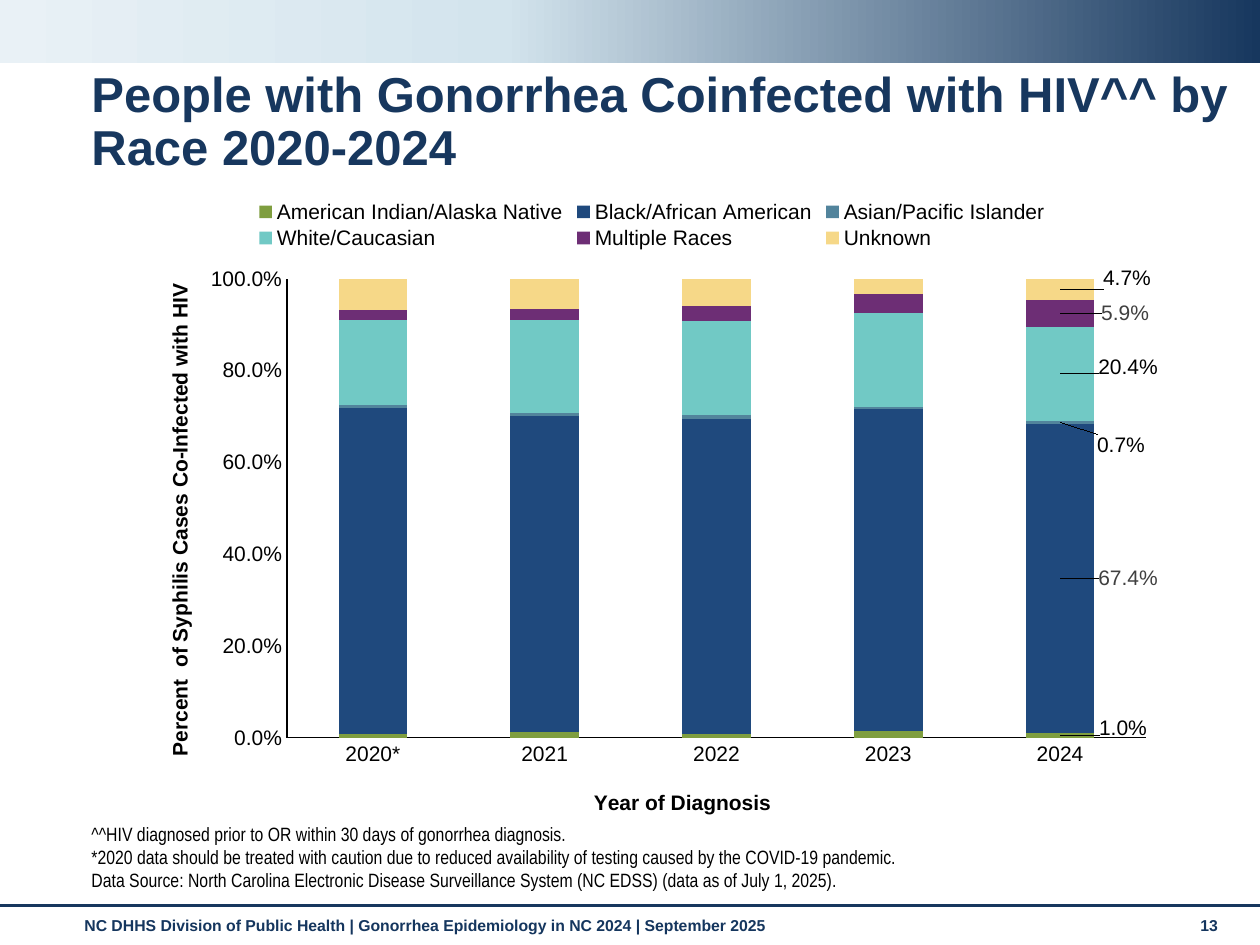
import copy
from dataclasses import dataclass

import pptx
import pptx.chart.data
import pptx.dml.color
import pptx.enum.chart
import pptx.enum.shapes
import pptx.enum.text
import pptx.oxml
import pptx.oxml.ns
import pptx.util

RGB = pptx.dml.color.RGBColor
NAVY = RGB(0x17, 0x37, 0x5E)
INK = RGB(0x15, 0x36, 0x5E)
BLACK = RGB(0, 0, 0)
GRAY = RGB(0x40, 0x40, 0x40)
MIST = RGB(0xE9, 0xF1, 0xF6)
SKY = RGB(0xD3, 0xE4, 0xED)
GREEN = RGB(0x7F, 0x9E, 0x3F)
BLUE = RGB(0x1F, 0x49, 0x7D)
STEEL = RGB(0x52, 0x84, 0x9C)
TEAL = RGB(0x71, 0xC9, 0xC5)
PLUM = RGB(0x6D, 0x2E, 0x75)
GOLD = RGB(0xF6, 0xD8, 0x88)

SCALE = 914400 / 126
TOP = pptx.enum.text.MSO_ANCHOR.TOP
BASE = pptx.enum.text.MSO_ANCHOR.BOTTOM
qn = pptx.oxml.ns.qn


@dataclass
class Box:
    left: int
    top: int
    width: int
    height: int

    def emu(self) -> list[int]:
        return [px(n) for n in (self.left, self.top, self.width, self.height)]


@dataclass
class Note:
    box: Box
    lines: list[str]
    size: int
    color: RGB
    face: str = "Arial"
    bold: bool = True
    anchor: pptx.enum.text.MSO_ANCHOR = TOP
    space: float = 1.0


@dataclass
class Race:
    name: str
    vals: list[float]
    color: RGB
    ink: RGB
    right: int
    down: int


FRAME = Box(134, 186, 1034, 648)
PLOT = Box(287, 279, 859, 459)
LEGEND = Box(252, 197, 800, 56)

NOTES = [
    Note(Box(72, 910, 1101, 37),
         ["NC DHHS Division of Public Health | Gonorrhea Epidemiology in NC 2024 | September 2025"],
         9, INK),
    Note(Box(1188, 910, 55, 38), ["13"], 9, INK),
    Note(Box(79, 64, 1164, 76),
         ["People with Gonorrhea Coinfected with HIV^^ by Race 2020-2024"],
         28, NAVY, space=0.9),
    Note(Box(79, 819, 1101, 79),
         ["^^HIV diagnosed prior to OR within 30 days of gonorrhea diagnosis.",
          "*2020 data should be treated with caution due to reduced availability of testing "
          "caused by the COVID-19 pandemic.",
          "Data Source: North Carolina Electronic Disease Surveillance System (NC EDSS) "
          "(data as of July 1, 2025)."],
         11, BLACK, "Arial Narrow", False, BASE),
]

YEARS = ["2020*", "2021", "2022", "2023", "2024"]
RACES = [
    Race("American Indian/Alaska Native", [0.009, 0.013, 0.009, 0.014, 0.01], GREEN, BLACK, 63, -7),
    Race("Black/African American", [0.71, 0.689, 0.686, 0.702, 0.674], BLUE, GRAY, 68, 0),
    Race("Asian/Pacific Islander", [0.006, 0.006, 0.008, 0.006, 0.007], STEEL, BLACK, 61, 23),
    Race("White/Caucasian", [0.185, 0.203, 0.206, 0.204, 0.204], TEAL, BLACK, 68, -7),
    Race("Multiple Races", [0.022, 0.024, 0.031, 0.041, 0.059], PLUM, GRAY, 65, 0),
    Race("Unknown", [0.068, 0.065, 0.061, 0.033, 0.047], GOLD, BLACK, 67, -11),
]


def px(n: int) -> int:
    return round(n * SCALE)


def style(font, size: int, color: RGB, bold: bool = False, face: str = "Arial") -> None:
    font.name, font.size, font.bold = face, pptx.util.Pt(size), bold
    font.color.rgb = color


def write(slide, note: Note) -> None:
    frame = slide.shapes.add_textbox(*note.box.emu()).text_frame
    frame.word_wrap = True
    frame.vertical_anchor = note.anchor
    for i, line in enumerate(note.lines):
        para = frame.add_paragraph() if i else frame.paragraphs[0]
        para.line_spacing = note.space
        run = para.add_run()
        run.text = line
        style(run.font, note.size, note.color, note.bold, note.face)


def banner(slide) -> None:
    bar = slide.shapes.add_shape(
        pptx.enum.shapes.MSO_SHAPE.RECTANGLE, *Box(0, 0, 1260, 63).emu())
    bar.shadow.inherit = False
    bar.line.fill.background()
    bar.fill.gradient()
    bar.fill.gradient_angle = 0
    stops = bar.element.spPr.find(".//" + qn("a:gsLst"))
    stops.append(copy.deepcopy(stops[0]))
    for stop, (spot, color) in zip(bar.fill.gradient_stops, [(0, MIST), (0.4, SKY), (1, NAVY)]):
        stop.position = spot
        stop.color.rgb = color


def rule(slide) -> None:
    line = slide.shapes.add_connector(
        pptx.enum.shapes.MSO_CONNECTOR.STRAIGHT, 0, px(906), px(1260), px(906))
    line.line.color.rgb = NAVY
    line.line.width = pptx.util.Pt(1.75)
    pptx.oxml.ns  # noqa
    line.element.spPr.append(line.element.spPr.makeelement(qn("a:effectLst"), {}))


def place(node, prev: str, **parts) -> None:
    for old in node.findall(qn("c:layout")):
        node.remove(old)
    outer = node.makeelement(qn("c:layout"), {})
    inner = outer.makeelement(qn("c:manualLayout"), {})
    outer.append(inner)
    for tag, val in parts.items():
        text = val if isinstance(val, str) else f"{val:.4f}"
        inner.append(inner.makeelement(qn("c:" + tag), {"val": text}))
    if prev:
        node.find(qn(prev)).addnext(outer)
    else:
        node.insert(0, outer)


def spot(left: int, top: int) -> dict:
    return {"xMode": "edge", "yMode": "edge",
            "x": (left - FRAME.left) / FRAME.width, "y": (top - FRAME.top) / FRAME.height}


def area(box: Box) -> dict:
    return spot(box.left, box.top) | {
        "w": box.width / FRAME.width, "h": box.height / FRAME.height}


def axis(axis, text: str, left: int, top: int, turn: int) -> None:
    axis.has_major_gridlines = False
    axis.major_tick_mark = axis.minor_tick_mark = pptx.enum.chart.XL_TICK_MARK.NONE
    style(axis.tick_labels.font, 12, BLACK)
    axis.format.line.color.rgb = BLACK
    axis.format.line.width = pptx.util.Pt(0.75)
    frame = axis.axis_title.text_frame
    run = frame.paragraphs[0].add_run()
    run.text = text
    style(run.font, 12, BLACK, True)
    body = axis.axis_title.element.find(".//" + qn("a:bodyPr")) if hasattr(
        axis.axis_title, "element") else axis.axis_title._element.find(".//" + qn("a:bodyPr"))
    body.set("rot", str(turn * 60000))
    body.set("vert", "horz")
    place(axis.axis_title._element, "c:tx", **spot(left, top))


def graph(slide) -> None:
    data = pptx.chart.data.CategoryChartData(number_format="0.0%")
    data.categories = YEARS
    for race in RACES:
        data.add_series(race.name, race.vals)
    chart = slide.shapes.add_chart(
        pptx.enum.chart.XL_CHART_TYPE.COLUMN_STACKED, *FRAME.emu(), data).chart
    style(chart.font, 10, BLACK)
    chart.has_title = False
    chart.has_legend = True
    chart.legend.position = pptx.enum.chart.XL_LEGEND_POSITION.TOP
    chart.legend.include_in_layout = False
    style(chart.legend.font, 12, BLACK)
    place(chart.legend._element, "c:legendPos", **area(LEGEND))
    place(chart.plots[0]._element.getparent(), "", layoutTarget="inner", **area(PLOT))

    axis(chart.category_axis, "Year of Diagnosis", 590, 786, 0)
    scale = chart.value_axis
    axis(scale, "Percent  of Syphilis Cases Co-Infected with HIV", 163, 280, -90)
    scale.minimum_scale, scale.maximum_scale, scale.major_unit = 0, 1, 0.2
    scale.tick_labels.number_format = "0.0%"
    scale.tick_labels.number_format_is_linked = False

    plot = chart.plots[0]
    plot.gap_width, plot.overlap, plot.vary_by_categories = 150, 100, False
    for race, bars in zip(RACES, plot.series):
        bars.format.fill.solid()
        bars.format.fill.fore_color.rgb = race.color
        bars.data_labels.show_value = False
        last = len(YEARS) - 1
        style(bars.points[last].data_label.font, 12, race.ink)
        label = bars.data_labels._element.find(qn("c:dLbl"))
        place(label, "c:idx", x=race.right / FRAME.width, y=race.down / FRAME.height)


def main() -> None:
    deck = pptx.Presentation()
    deck.slide_width, deck.slide_height = px(1260), px(945)
    slide = deck.slides.add_slide(deck.slide_layouts[6])
    banner(slide)
    rule(slide)
    for note in NOTES:
        write(slide, note)
    graph(slide)
    deck.save("out.pptx")


if __name__ == "__main__":
    main()
